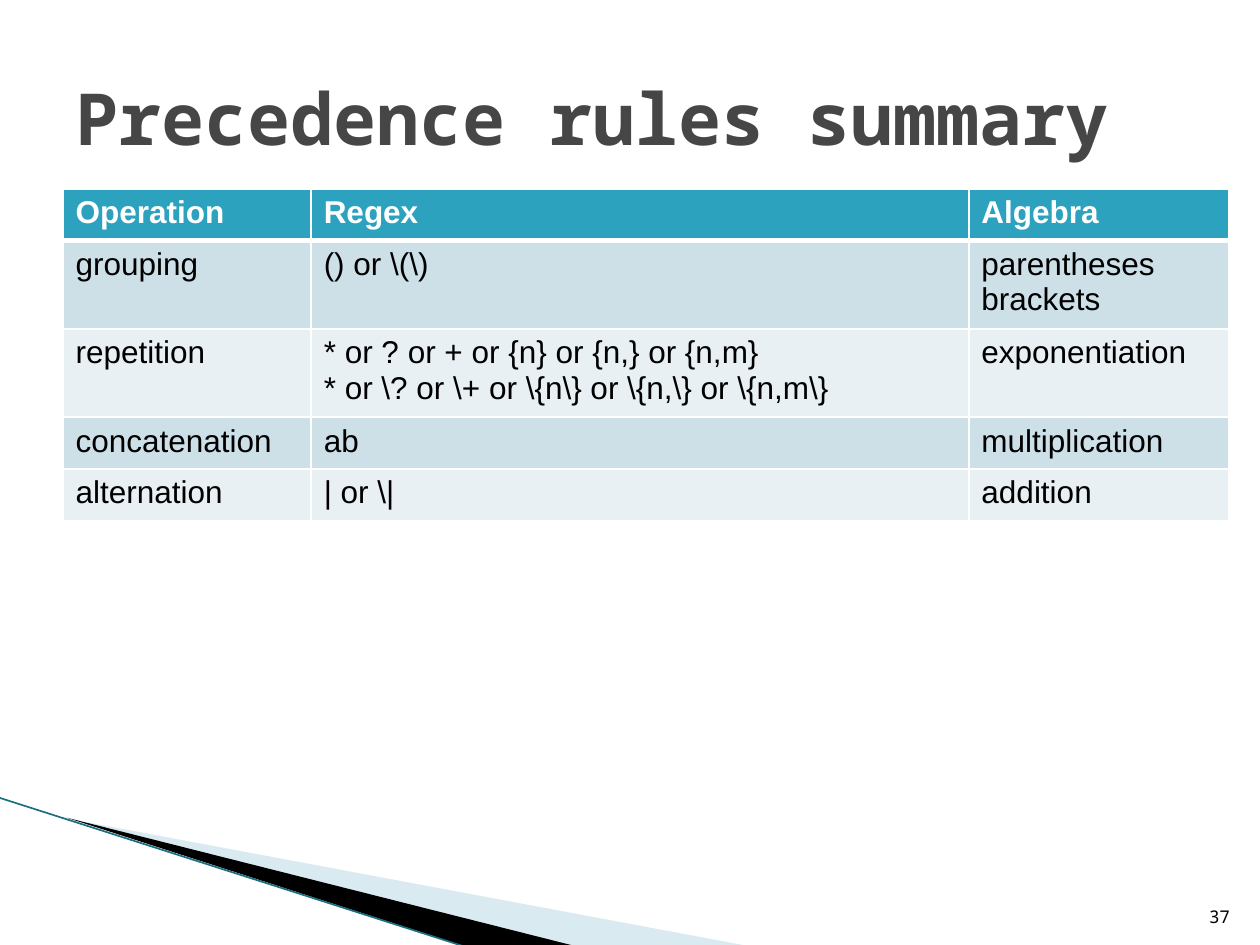
from lxml import etree
from pptx import Presentation, util as u
from pptx.dml import color as dml
from pptx.enum import shapes, text as t
from pptx.oxml import ns

COLUMN_WIDTHS = [1.97, 5.22, 2.06]
ROW_HEIGHT = 0.41
ROWS = [
    ["Operation", "Regex", "Algebra"],
    ["grouping", r"() or \(\)", "parentheses\nbrackets"],
    ["repetition",
     "* or ? or + or {n} or {n,} or {n,m}\n"
     r"* or \? or \+ or \{n\} or \{n,\} or \{n,m\}",
     "exponentiation"],
    ["concatenation", "ab", "multiplication"],
    ["alternation", r"| or \|", "addition"],
]


def rgb(value):
    return dml.RGBColor.from_string(value)


def add_element(parent, tag, **attributes):
    return etree.SubElement(parent, ns.qn(tag), attributes)


def write(frame, content, size, font, color="000000", bold=False,
          align=t.PP_ALIGN.LEFT, anchor=t.MSO_ANCHOR.TOP):
    """Fill a text frame, one paragraph per line of content."""
    frame.text = content
    frame.word_wrap = True
    frame.vertical_anchor = anchor
    for paragraph in frame.paragraphs:
        paragraph.alignment = align
        paragraph.font.size = u.Pt(size)
        paragraph.font.name = font
        paragraph.font.bold = bold
        paragraph.font.color.rgb = rgb(color)


class SlideBuilder:
    title_font = "Noto Sans Mono"
    table_font = "Arial"
    header_fill = "2DA2BF"
    band_fills = ["E8F0F4", "CDE0E8"]
    border_color = "FFFFFF"

    def __init__(self, slide):
        self.slide = slide

    def wedge(self, points, color, opacity=None):
        start, *rest = [(u.Inches(x), u.Inches(y)) for x, y in points]
        builder = self.slide.shapes.build_freeform(*start)
        builder.add_line_segments(rest, close=True)
        shape = builder.convert_to_shape()
        shape.shadow.inherit = False
        shape.line.fill.background()
        shape.fill.solid()
        shape.fill.fore_color.rgb = rgb(color)
        if opacity is not None:
            fill_color = shape.fill._xPr.find(".//" + ns.qn("a:srgbClr"))
            add_element(fill_color, "a:alpha", val=str(opacity * 1000))

    def line(self, start, end, color, width):
        ends = [u.Inches(value) for value in (*start, *end)]
        connector = self.slide.shapes.add_connector(
            shapes.MSO_CONNECTOR.STRAIGHT, *ends)
        connector.line.color.rgb = rgb(color)
        connector.line.width = u.Pt(width)
        add_element(connector._element.spPr, "a:effectLst")

    def title(self, content, *box):
        title = self.slide.shapes.title
        title.left, title.top, title.width, title.height = map(u.Inches, box)
        write(title.text_frame, content, size=41, font=self.title_font,
              color="464646", bold=True, anchor=t.MSO_ANCHOR.MIDDLE)

    def page_number(self, content, *box):
        shape = self.slide.shapes.add_textbox(*map(u.Inches, box))
        write(shape.text_frame, content, size=10, font=self.title_font,
              align=t.PP_ALIGN.RIGHT, anchor=t.MSO_ANCHOR.BOTTOM)

    def borders(self, cell, is_header):
        properties = cell._tc.get_or_add_tcPr()
        for side in "LRTB":
            width = 3 if is_header and side == "B" else 1
            border = add_element(properties, f"a:ln{side}", w=str(u.Pt(width)))
            fill = add_element(border, "a:solidFill")
            add_element(fill, "a:srgbClr", val=self.border_color)

    def table(self, rows, left, top, widths, row_height):
        table = self.slide.shapes.add_table(
            len(rows), len(widths), u.Inches(left), u.Inches(top),
            u.Inches(sum(widths)), u.Inches(row_height * len(rows))).table
        for column, width in zip(table.columns, widths):
            column.width = u.Inches(width)
        for row_index, row in enumerate(rows):
            is_header = row_index == 0
            fill = self.header_fill if is_header else self.band_fills[row_index % 2]
            for column_index, content in enumerate(row):
                cell = table.cell(row_index, column_index)
                self.borders(cell, is_header)
                cell.fill.solid()
                cell.fill.fore_color.rgb = rgb(fill)
                write(cell.text_frame, content, size=18, font=self.table_font,
                      color="FFFFFF" if is_header else "000000", bold=is_header)


def main():
    presentation = Presentation()
    presentation.slide_width = u.Inches(10)
    presentation.slide_height = u.Inches(7.5)
    title_only = presentation.slide_layouts[5]
    builder = SlideBuilder(presentation.slides.add_slide(title_only))

    # Corner decoration
    builder.wedge([(0.55, 6.5), (5.95, 7.51), (4.56, 7.51)], "A0CBDC", opacity=40)
    builder.wedge([(0.53, 6.49), (4.57, 7.51), (3.72, 7.52)], "000000")
    builder.line((-0.01, 6.33), (3.71, 7.52), "1A6F82", 0.95)

    # Title and page number
    builder.title("Precedence rules summary", 0.5, 0.3, 9, 1.25)
    builder.page_number("37", 9.46, 7.01, 0.4, 0.4)

    # Precedence table
    builder.table(ROWS, 0.5, 1.5, COLUMN_WIDTHS, ROW_HEIGHT)

    presentation.save("out.pptx")


if __name__ == "__main__":
    main()
